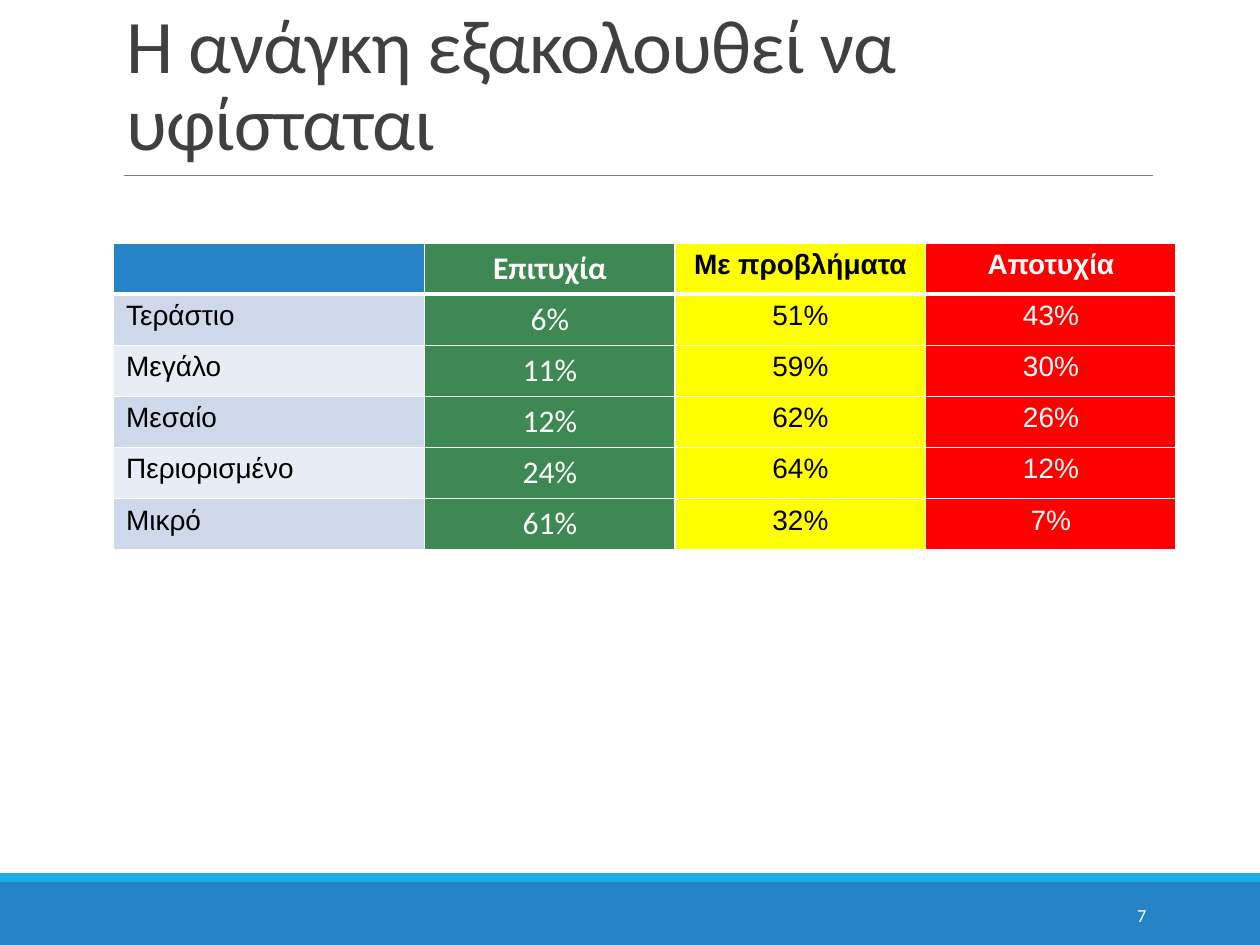
from dataclasses import dataclass

from lxml import etree
from pptx import Presentation
from pptx import util as u
from pptx.dml.color import RGBColor
from pptx.enum import shapes, text
from pptx.oxml import ns

WHITE = RGBColor(0xFF, 0xFF, 0xFF)
BLACK = RGBColor(0, 0, 0)
CHARCOAL = RGBColor(0x40, 0x40, 0x40)
GRAY = RGBColor(0x80, 0x80, 0x80)
BLUE = RGBColor(0x26, 0x83, 0xC6)
SKY = RGBColor(0x1C, 0xAD, 0xE4)
GREEN = RGBColor(0x3E, 0x88, 0x53)
YELLOW = RGBColor(0xFF, 0xFF, 0)
RED = RGBColor(0xFF, 0, 0)
STRIPES = (RGBColor(0xCD, 0xD9, 0xEA), RGBColor(0xE8, 0xED, 0xF5))

ROW_HEIGHT = 1.03


@dataclass(frozen=True)
class Column:
    header: str
    values: tuple[str, ...]
    width: float
    fills: tuple[RGBColor, ...]
    header_fill: RGBColor
    color: RGBColor
    font: str = "Arial"
    size: float = 16
    align: text.PP_ALIGN = text.PP_ALIGN.CENTER


COLUMNS = (
    Column("", ("Τεράστιο", "Μεγάλο", "Μεσαίο", "Περιορισμένο", "Μικρό"),
           6.27, STRIPES, BLUE, BLACK, align=text.PP_ALIGN.LEFT),
    Column("Επιτυχία", ("6%", "11%", "12%", "24%", "61%"),
           5.05, (GREEN,), GREEN, WHITE, "Calibri", 18),
    Column("Με προβλήματα", ("51%", "59%", "62%", "64%", "32%"),
           5.05, (YELLOW,), YELLOW, BLACK),
    Column("Αποτυχία", ("43%", "30%", "26%", "12%", "7%"),
           5.05, (RED,), RED, WHITE),
)


def format_runs(paragraph, font: str, size: float, color: RGBColor, bold: bool = False) -> None:
    for run in paragraph.runs:
        run.font.name = font
        run.font.size = u.Pt(size)
        run.font.color.rgb = color
        run.font.bold = bold


def add_band(slide, top: float, height: float, fill: RGBColor) -> None:
    band = slide.shapes.add_shape(shapes.MSO_SHAPE.RECTANGLE, 0, u.Cm(top), u.Cm(25.4), u.Cm(height))
    band.shadow.inherit = False
    band.fill.solid()
    band.fill.fore_color.rgb = fill
    band.line.fill.background()


def set_header_borders(cell) -> None:
    properties = cell._tc.get_or_add_tcPr()
    for index, (side, points) in enumerate((("L", 1), ("R", 1), ("T", 1), ("B", 3))):
        border = etree.Element(ns.qn(f"a:ln{side}"), w=str(u.Pt(points)))
        fill = etree.SubElement(border, ns.qn("a:solidFill"))
        etree.SubElement(fill, ns.qn("a:srgbClr"), val=str(WHITE))
        properties.insert(index, border)


def fill_cell(cell, content: str, column: Column, fill: RGBColor, bold: bool) -> None:
    cell.fill.solid()
    cell.fill.fore_color.rgb = fill
    paragraph = cell.text_frame.paragraphs[0]
    paragraph.text = content
    paragraph.alignment = column.align
    format_runs(paragraph, column.font, column.size, column.color, bold)


def add_results(slide) -> None:
    row_count = len(COLUMNS[0].values) + 1
    width = sum(column.width for column in COLUMNS)
    results = slide.shapes.add_table(row_count, len(COLUMNS), u.Cm(2.29), u.Cm(4.9),
                                     u.Cm(width), u.Cm(ROW_HEIGHT * row_count)).table
    for row in results.rows:
        row.height = u.Cm(ROW_HEIGHT)
    for index, column in enumerate(COLUMNS):
        results.columns[index].width = u.Cm(column.width)
        header = results.cell(0, index)
        fill_cell(header, column.header, column, column.header_fill, True)
        set_header_borders(header)
        for row, value in enumerate(column.values):
            fill = column.fills[row % len(column.fills)]
            fill_cell(results.cell(row + 1, index), value, column, fill, False)


def add_title(slide) -> None:
    title = slide.shapes.title
    title.left, title.top, title.width, title.height = map(u.Cm, (2.29, 0.28, 20.95, 3.2))
    frame = title.text_frame
    frame.text = "Η ανάγκη εξακολουθεί να υφίσταται"
    frame.word_wrap = True
    frame.auto_size = text.MSO_AUTO_SIZE.NONE
    frame.vertical_anchor = text.MSO_ANCHOR.BOTTOM
    paragraph = frame.paragraphs[0]
    paragraph.alignment = text.PP_ALIGN.LEFT
    paragraph.line_spacing = 0.85
    format_runs(paragraph, "Calibri", 43.2, CHARCOAL)
    paragraph.runs[0].font._element.set("spc", "-50")


def add_title_rule(slide) -> None:
    rule = slide.shapes.add_connector(shapes.MSO_CONNECTOR.STRAIGHT,
                                      u.Cm(2.49), u.Cm(3.53), u.Cm(23.24), u.Cm(3.53))
    rule.line.color.rgb = GRAY
    rule.line.width = u.Pt(0.5)
    etree.SubElement(rule._element.spPr, ns.qn("a:effectLst"))


def add_page_number(slide) -> None:
    frame = slide.shapes.add_textbox(u.Cm(20.62), u.Cm(17.93), u.Cm(2.74), u.Cm(1.02)).text_frame
    frame.text = "7"
    frame.word_wrap = True
    frame.vertical_anchor = text.MSO_ANCHOR.MIDDLE
    frame.paragraphs[0].alignment = text.PP_ALIGN.RIGHT
    format_runs(frame.paragraphs[0], "Calibri", 10.5, WHITE)


def main() -> None:
    deck = Presentation()
    deck.slide_width, deck.slide_height = u.Cm(25.4), u.Cm(19.05)
    slide = deck.slides.add_slide(deck.slide_layouts[5])

    # Footer bands
    add_band(slide, 17.78, 1.27, BLUE)
    add_band(slide, 17.6, 0.18, SKY)

    # Heading
    add_title_rule(slide)
    add_title(slide)

    # Content and page number
    add_page_number(slide)
    add_results(slide)

    deck.save("out.pptx")


if __name__ == "__main__":
    main()
